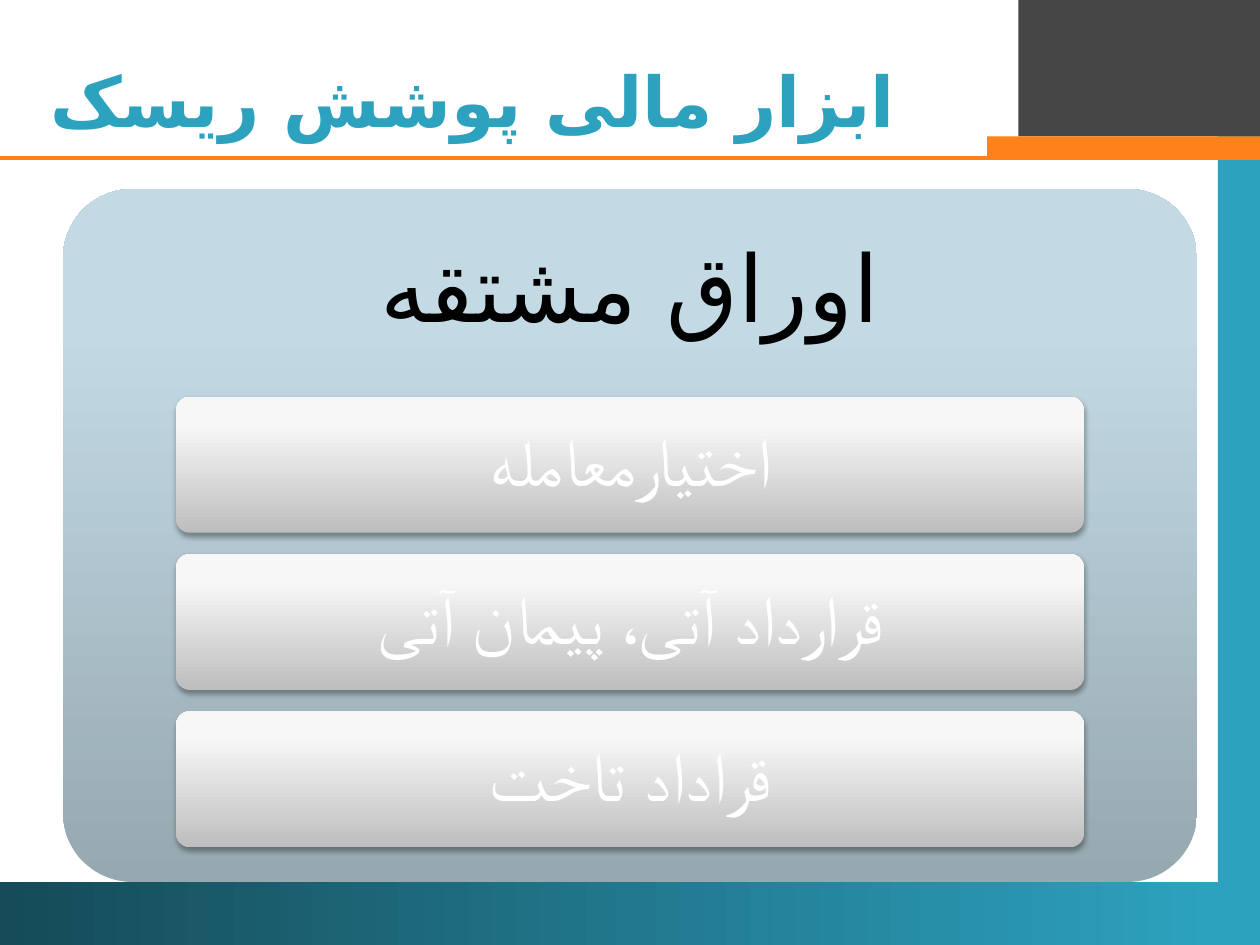
from dataclasses import dataclass

from lxml.etree import SubElement
from pptx import Presentation
from pptx.dml.color import RGBColor
from pptx.enum.shapes import MSO_CONNECTOR as Connector, MSO_SHAPE as Shape
from pptx.enum.text import MSO_ANCHOR as Anchor, MSO_AUTO_SIZE as AutoSize, PP_ALIGN as Align
from pptx.oxml import parse_xml
from pptx.oxml.ns import nsdecls, qn
from pptx.util import Cm, Pt


@dataclass(frozen=True)
class Theme:
    font: str = "Arial"
    heading_script_font: str = "DejaVu Sans"
    teal: str = "2DA2BF"
    orange: str = "FF8119"
    charcoal: str = "464646"
    black: str = "000000"
    white: str = "FFFFFF"
    footer: tuple = ((0, "154B58"), (100, "2DA2BF"))
    panel: tuple = ((0, "96A8B0"), (80, "C3DAE5"), (100, "C3DCE7"))
    card: tuple = ((0, "BEBEBE"), (80, "F7F7F7"), (100, "F8F8F8"))
    title_size: int = 40
    heading_size: int = 53
    card_size: int = 39


theme = Theme()


def add_block(kind, left, top, width, height, fill, angle=0):
    shape = slide.shapes.add_shape(kind, Cm(left), Cm(top), Cm(width), Cm(height))
    shape.shadow.inherit = False
    shape.line.fill.background()
    if isinstance(fill, str):
        shape.fill.solid()
        shape.fill.fore_color.rgb = RGBColor.from_string(fill)
    else:
        shape.fill.gradient()
        shape.fill.gradient_angle = angle
        stops = shape._element.spPr.find(".//" + qn("a:gsLst"))
        for stop in list(stops):
            stops.remove(stop)
        for position, color in fill:
            stop = SubElement(stops, qn("a:gs"), pos=str(position * 1000))
            SubElement(stop, qn("a:srgbClr"), val=color)
    return shape


def write_text(shape, text, size, color, inset_x, inset_y, script_font, bold=False, spacing=0.9):
    frame = shape.text_frame
    frame.text = text
    frame.word_wrap = True
    frame.auto_size = AutoSize.NONE
    frame.vertical_anchor = Anchor.MIDDLE
    frame.margin_left = frame.margin_right = Cm(inset_x)
    frame.margin_top = frame.margin_bottom = Cm(inset_y)
    paragraph = frame.paragraphs[0]
    paragraph.alignment = Align.CENTER
    paragraph.line_spacing = spacing
    paragraph.font.name = theme.font
    paragraph.font.size = Pt(size)
    paragraph.font.bold = bold
    paragraph.font.color.rgb = RGBColor.from_string(color)
    properties = paragraph._p.get_or_add_pPr()
    properties.set("rtl", "1")
    SubElement(properties.find(qn("a:defRPr")), qn("a:cs"), typeface=script_font)


presentation = Presentation()
presentation.slide_width = Cm(25.4)
presentation.slide_height = Cm(19.05)
slide = presentation.slides.add_slide(presentation.slide_layouts[5])

add_block(Shape.RECTANGLE, 24.55, 0.64, 0.85, 18.41, theme.teal)
add_block(Shape.RECTANGLE, 0, 17.78, 24.56, 1.27, theme.footer)
add_block(Shape.RECTANGLE, 20.53, 0, 4.87, 2.75, theme.charcoal)
rule = slide.shapes.add_connector(Connector.STRAIGHT, Cm(25.4), Cm(3.18), Cm(0), Cm(3.18))
rule.line.color.rgb = RGBColor.from_string(theme.orange)
rule.line.width = Pt(2.25)
SubElement(rule._element.spPr, qn("a:effectLst"))
add_block(Shape.RECTANGLE, 19.9, 2.75, 5.5, 0.43, theme.orange)

title = slide.shapes.title
title.left, title.top, title.width, title.height = Cm(0), Cm(1.27), Cm(19.05), Cm(1.48)
write_text(title, "ابزار مالی پوشش ریسک", theme.title_size, theme.teal, 0.25, 0.13,
           theme.heading_script_font, bold=True, spacing=1.0)
slide.shapes._spTree.append(title._element)

panel = add_block(Shape.ROUNDED_RECTANGLE, 1.27, 3.81, 22.86, 13.97, theme.panel, 90)
panel.adjustments[0] = 0.1
heading = slide.shapes.add_textbox(Cm(1.27), Cm(3.81), Cm(22.86), Cm(4.19))
write_text(heading, "اوراق مشتقه", theme.heading_size, theme.black, 0.56, 0.56,
           theme.heading_script_font)

cards = ["اختیارمعامله", "قرارداد آتی، پیمان آتی", "قراداد تاخت"]
for index, text in enumerate(cards):
    card = add_block(Shape.ROUNDED_RECTANGLE, 3.55, 8 + index * 3.17, 18.3, 2.74,
                     theme.card, 90)
    card.adjustments[0] = 0.1
    effects = card._element.spPr.find(qn("a:effectLst"))
    effects.append(parse_xml(
        f'<a:outerShdw {nsdecls("a")} blurRad="{Pt(3.1)}" dist="{Pt(1.8)}" '
        f'dir="5400000" rotWithShape="0"><a:srgbClr val="{theme.black}">'
        '<a:alpha val="35000"/></a:srgbClr></a:outerShdw>'))
    write_text(card, text, theme.card_size, theme.white, 0.36, 0.28, theme.font)

presentation.save("out.pptx")
